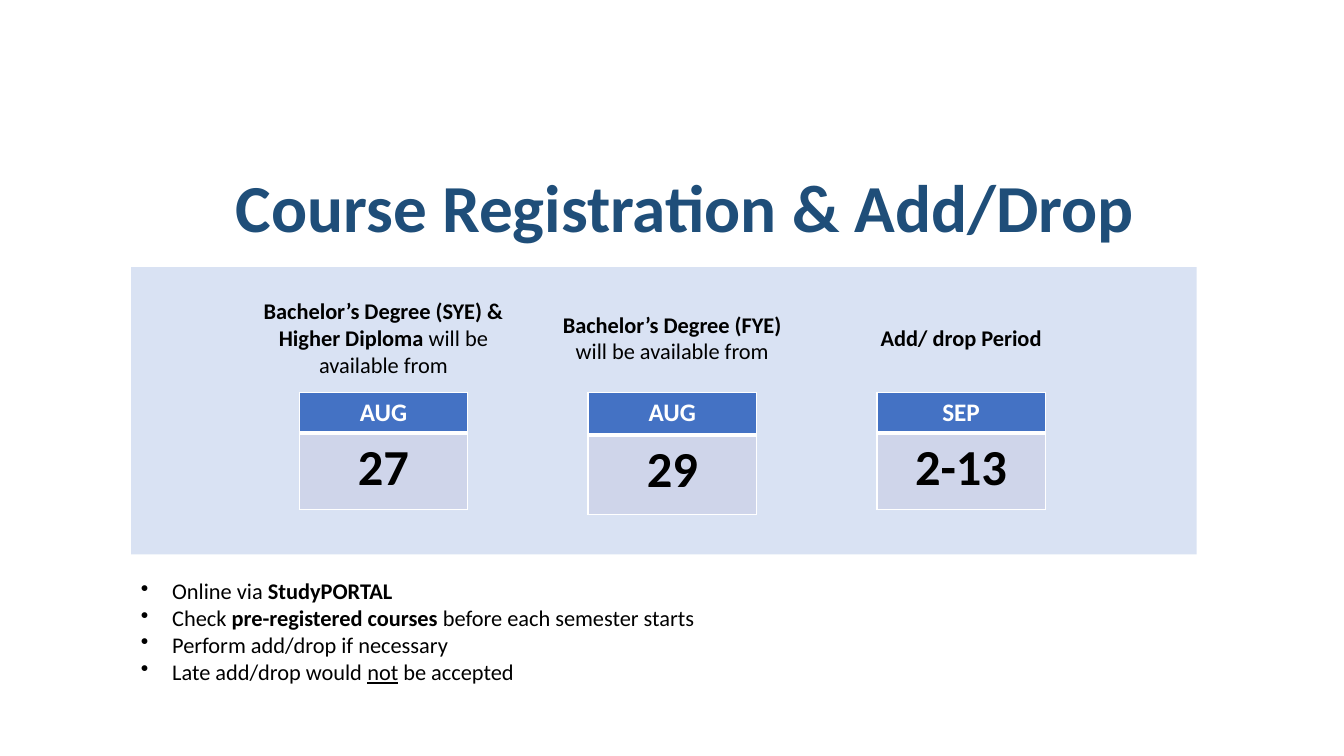
from dataclasses import dataclass

from lxml import etree
from pptx import Presentation
from pptx.dml.color import RGBColor
from pptx.enum.shapes import MSO_SHAPE
from pptx.enum.text import MSO_ANCHOR, MSO_AUTO_SIZE, PP_ALIGN
from pptx.oxml.ns import qn
from pptx.util import Inches, Pt

RECTANGLE = MSO_SHAPE.RECTANGLE
MIDDLE = MSO_ANCHOR.MIDDLE
LEFT, CENTER = PP_ALIGN.LEFT, PP_ALIGN.CENTER
FIT_SHAPE, NO_FIT = MSO_AUTO_SIZE.SHAPE_TO_FIT_TEXT, MSO_AUTO_SIZE.NONE

FONT = "Calibri"
COLORS = {
    "title": "1F4E79",
    "accent": "4472C4",
    "day": "CFD5EA",
    "text": "000000",
    "white": "FFFFFF",
}
SLIDE_WIDTH, SLIDE_HEIGHT = Inches(13.33), Inches(7.5)

# Lengths are percentages of the slide's width or height.
MARGIN, PANEL_WIDTH = 9.75, 79.28
CARD_CENTER, CARD_PITCH, CARD_WIDTH, CARD_TOP = 50.02, 21.49, 12.53, 51.9
LABEL_MIDDLE, LABEL_LINE, LABEL_PADDING = 44.7, 3.6, 1.33
BULLET_INDENT = Inches(0.31)


@dataclass(frozen=True)
class Span:
    text: str
    bold: bool = False
    underline: bool = False


@dataclass(frozen=True)
class Area:
    left: float
    top: float
    width: float
    height: float

    def box(self) -> tuple[int, int, int, int]:
        """Return left, top, width and height in slide units."""
        return (
            int(SLIDE_WIDTH * self.left / 100),
            int(SLIDE_HEIGHT * self.top / 100),
            int(SLIDE_WIDTH * self.width / 100),
            int(SLIDE_HEIGHT * self.height / 100),
        )


@dataclass(frozen=True)
class DateCard:
    label: list[list[Span]]
    label_lines: int
    label_width: float
    month: str
    days: str
    row_heights: tuple[float, float] = (5.33, 10.13)


CARDS = [
    DateCard(
        [
            [Span("Bachelor’s Degree (SYE) &", bold=True)],
            [Span("Higher Diploma ", bold=True), Span("will be available from")],
        ],
        3, 19.5, "AUG", "27",
    ),
    DateCard(
        [
            [Span("Bachelor’s Degree (FYE)", bold=True)],
            [Span("will be available from")],
        ],
        2, 18.3, "AUG", "29", (5.6, 10.53),
    ),
    DateCard([[Span("Add/ drop Period", bold=True)]], 1, 17.03, "SEP", "2-13"),
]
NOTES = [
    [Span("Online via "), Span("StudyPORTAL", bold=True)],
    [
        Span("Check "),
        Span("pre-registered courses", bold=True),
        Span(" before each semester starts"),
    ],
    [Span("Perform add/drop if necessary")],
    [Span("Late add/drop would "), Span("not", underline=True), Span(" be accepted")],
]


def rgb(name: str) -> RGBColor:
    return RGBColor.from_string(COLORS[name])


def write(paragraph, spans: list[Span], size: float, color: str, align=LEFT) -> None:
    paragraph.alignment = align
    for span in spans:
        run = paragraph.add_run()
        run.text = span.text
        font = run.font
        font.name, font.size = FONT, Pt(size)
        font.bold, font.underline = span.bold, span.underline
        font.color.rgb = rgb(color)


def add_bullet(paragraph) -> None:
    properties = paragraph._p.get_or_add_pPr()
    properties.set("marL", str(BULLET_INDENT))
    properties.set("indent", str(-BULLET_INDENT))
    etree.SubElement(properties, qn("a:buChar"), char="•")


def add_text(slide, area: Area, lines: list[list[Span]], align=LEFT,
             bulleted: bool = False) -> None:
    frame = slide.shapes.add_textbox(*area.box()).text_frame
    frame.word_wrap, frame.auto_size = True, FIT_SHAPE
    for index, spans in enumerate(lines):
        paragraph = frame.add_paragraph() if index else frame.paragraphs[0]
        if bulleted:
            add_bullet(paragraph)
        write(paragraph, spans, 16, "text", align)


def add_title(slide, area: Area, text: str) -> None:
    title = slide.shapes.title
    title.left, title.top, title.width, title.height = area.box()
    frame = title.text_frame
    frame.word_wrap, frame.auto_size = True, NO_FIT
    frame.vertical_anchor = MIDDLE
    write(frame.paragraphs[0], [Span(text, bold=True)], 48, "title")


def add_panel(slide, area: Area) -> None:
    panel = slide.shapes.add_shape(RECTANGLE, *area.box())
    panel.shadow.inherit = False
    panel.fill.solid()
    panel.fill.fore_color.rgb = rgb("accent")
    color = panel.fill._xPr.find(".//" + qn("a:srgbClr"))
    etree.SubElement(color, qn("a:alpha"), val="20000")
    panel.line.fill.background()


def add_borders(cell, top: float, bottom: float) -> None:
    properties = cell._tc.get_or_add_tcPr()
    for side, width in {"L": 1, "R": 1, "T": top, "B": bottom}.items():
        line = etree.SubElement(properties, qn(f"a:ln{side}"), w=str(Pt(width)))
        fill = etree.SubElement(line, qn("a:solidFill"))
        etree.SubElement(fill, qn("a:srgbClr"), val=COLORS["white"])


def add_card(slide, card: DateCard, center: float) -> None:
    area = Area(center - CARD_WIDTH / 2, CARD_TOP, CARD_WIDTH, sum(card.row_heights))
    table = slide.shapes.add_table(2, 1, *area.box()).table
    rows = [
        (card.month, 18, "white", "accent", 1, 3),
        (card.days, 36, "text", "day", 3, 1),
    ]
    for index, (text, size, color, fill, top, bottom) in enumerate(rows):
        table.rows[index].height = int(SLIDE_HEIGHT * card.row_heights[index] / 100)
        cell = table.cell(index, 0)
        add_borders(cell, top, bottom)
        cell.fill.solid()
        cell.fill.fore_color.rgb = rgb(fill)
        paragraph = cell.text_frame.paragraphs[0]
        write(paragraph, [Span(text, bold=True)], size, color, CENTER)

    height = card.label_lines * LABEL_LINE + LABEL_PADDING
    label_area = Area(center - card.label_width / 2, LABEL_MIDDLE - height / 2,
                      card.label_width, height)
    add_text(slide, label_area, card.label, CENTER)


def main() -> None:
    deck = Presentation()
    deck.slide_width, deck.slide_height = SLIDE_WIDTH, SLIDE_HEIGHT
    slide = deck.slides.add_slide(deck.slide_layouts.get_by_name("Title Only"))
    add_panel(slide, Area(MARGIN, 35.33, PANEL_WIDTH, 38))
    add_text(slide, Area(MARGIN, 75.73, 50, 15.73), NOTES, bulleted=True)
    add_title(slide, Area(16.8, 19.2, 73.43, 16.13), "Course Registration & Add/Drop")
    for index, card in enumerate(CARDS):
        add_card(slide, card, CARD_CENTER + (index - 1) * CARD_PITCH)
    deck.save("out.pptx")


if __name__ == "__main__":
    main()
